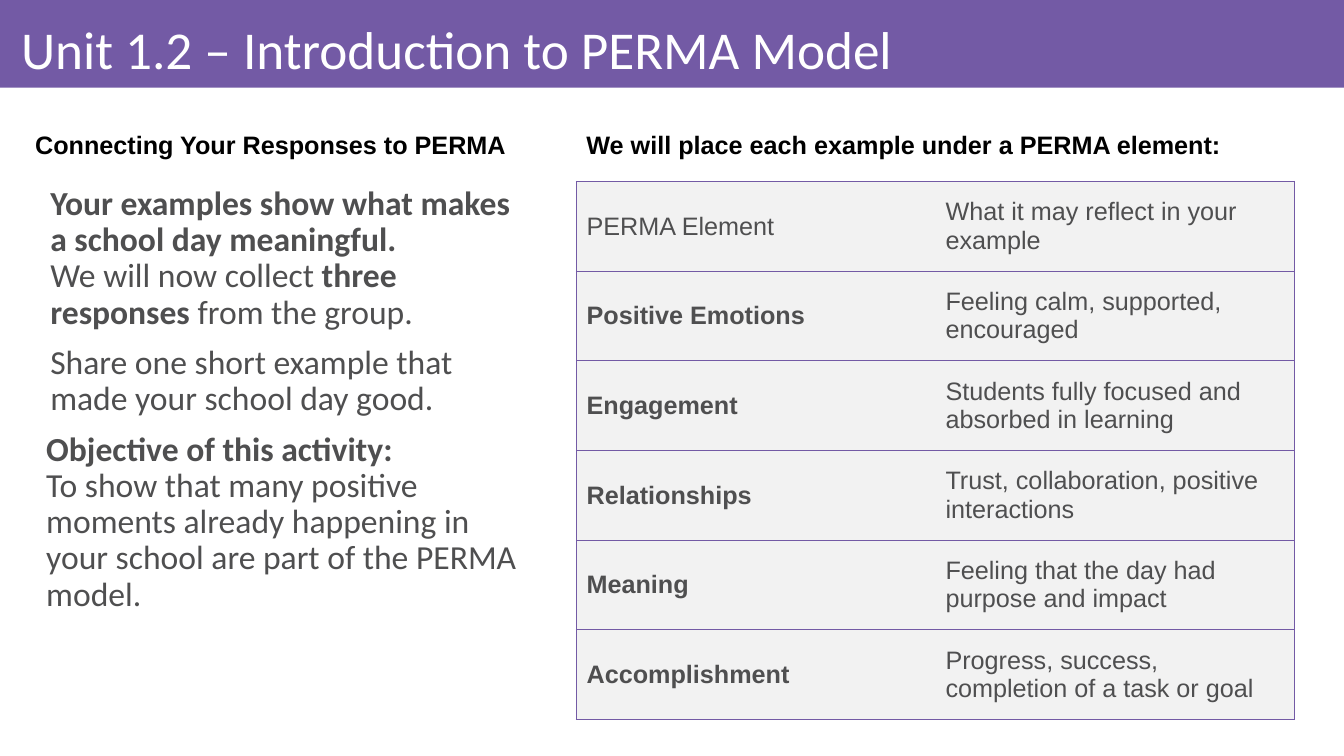
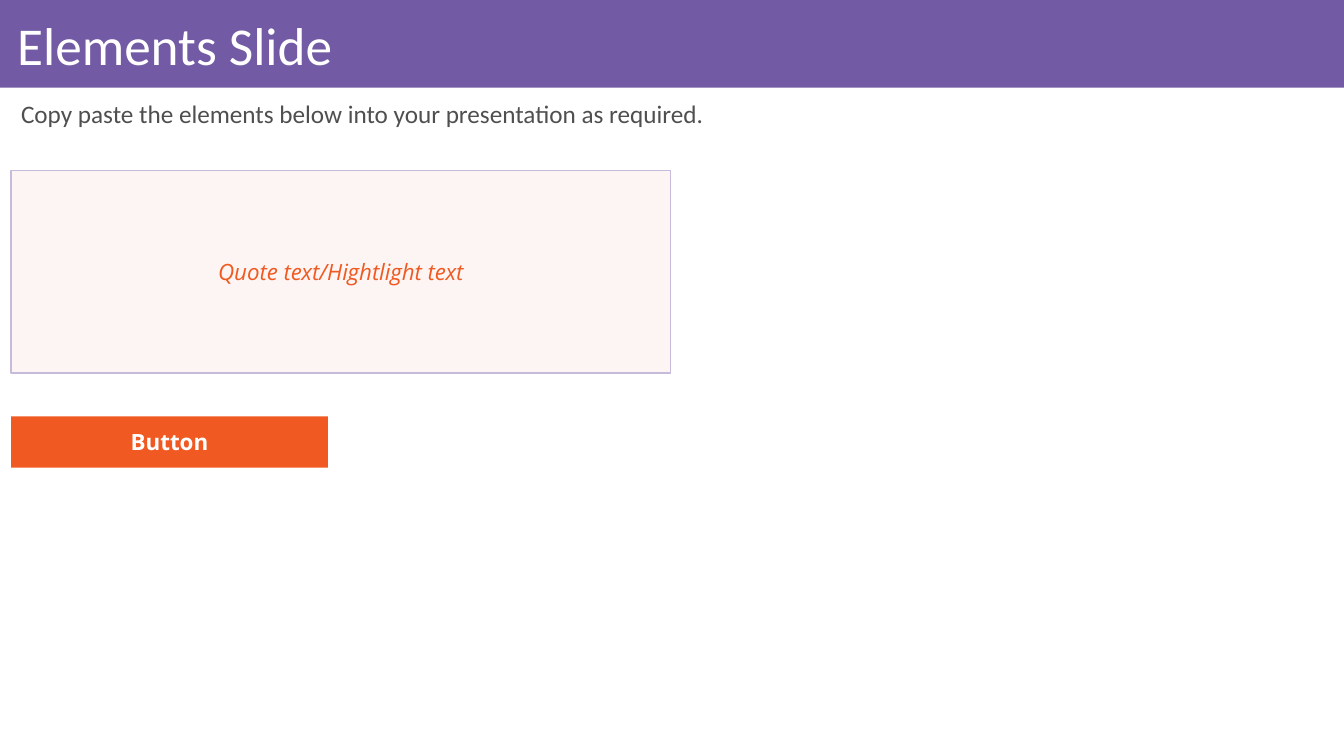
from dataclasses import dataclass

from lxml.etree import SubElement
from pptx import Presentation
from pptx.dml.color import RGBColor
from pptx.enum.shapes import MSO_SHAPE
from pptx.enum.text import MSO_ANCHOR, PP_ALIGN
from pptx.oxml import parse_xml
from pptx.oxml.ns import nsdecls, qn
from pptx.util import Inches, Pt

SLIDE_WIDTH = Inches(13.333)
SLIDE_HEIGHT = Inches(7.5)
PURPLE = "735AA5"
LILAC = "C6BBDB"
ORANGE = "F05A22"
BLUSH = "F8E7E3"
GREY = "4F4F50"
PALE_GREY = "F2F2F2"
WHITE = "FFFFFF"
BLACK = "000000"
PLAIN_TABLE = "{2D5ABB26-0587-4C30-8999-92F81FD0307C}"
BREAK = "\n"


@dataclass(frozen=True)
class Area:
    left: float
    top: float
    width: float
    height: float

    def lengths(self) -> tuple[int, int, int, int]:
        return (
            share(self.left, SLIDE_WIDTH),
            share(self.top, SLIDE_HEIGHT),
            share(self.width, SLIDE_WIDTH),
            share(self.height, SLIDE_HEIGHT),
        )


@dataclass(frozen=True)
class Style:
    font: str
    size: float
    color: str
    bold: bool = False
    italic: bool = False


@dataclass(frozen=True)
class Piece:
    text: str
    bold: bool = False


@dataclass(frozen=True)
class Passage:
    pieces: tuple[Piece, ...]
    indent: float = 0


@dataclass(frozen=True)
class Panel:
    area: Area
    text: str
    style: Style
    fill: str
    opacity: int = 100
    line: str | None = None


TITLE = Style("Calibri", 38, WHITE)
BODY = Style("Calibri", 24, GREY)
INTRO = Style("Calibri", 18, GREY)
HEADING = Style("Arial", 18, BLACK, bold=True)
CELL = Style("Arial", 18, GREY)
QUOTE = Style("Open Sans", 16, ORANGE, italic=True)
BUTTON = Style("Open Sans", 16, WHITE, bold=True)

BAND_AREA = Area(0, 0, 100, 11.6)
TITLE_AREA = Area(0.83, 1.2, 97.97, 10.4)
INTRO_AREA = Area(0.83, 12.8, 97.97, 6.27)
BODY_AREA = Area(0.83, 24, 39.23, 73)
TABLE_AREA = Area(42.9, 24, 53.41, 71.2)

HEADINGS = (
    (Area(1.88, 16.4, 39.23, 5.33), "Connecting Your Responses to PERMA"),
    (Area(42.9, 16.4, 50.4, 5.33), "We will place each example under a PERMA element:"),
)

PASSAGES = (
    Passage((
        Piece("Your examples show what makes a school day meaningful.", True),
        Piece(BREAK),
        Piece("We will now collect "),
        Piece("three responses", True),
        Piece(" from the group."),
    ), 0.29),
    Passage((Piece("Share one short example that made your school day good."),), 0.29),
    Passage((
        Piece("Objective of this activity:", True),
        Piece(BREAK),
        Piece(
            "To show that many positive moments already happening in your "
            "school are part of the PERMA model."
        ),
    ), 0.25),
)

ELEMENTS = (
    ("PERMA Element", "What it may reflect in your example"),
    ("Positive Emotions", "Feeling calm, supported, encouraged"),
    ("Engagement", "Students fully focused and absorbed in learning"),
    ("Relationships", "Trust, collaboration, positive interactions"),
    ("Meaning", "Feeling that the day had purpose and impact"),
    ("Accomplishment", "Progress, success, completion of a task or goal"),
)

PANELS = (
    Panel(Area(0.83, 22.53, 49.06, 26.8), "Quote text/Hightlight text",
          QUOTE, BLUSH, 40, LILAC),
    Panel(Area(0.83, 55.07, 23.56, 6.8), "Button", BUTTON, ORANGE),
)


def share(percent: float, whole: int) -> int:
    return round(whole * percent / 100)


def color(value: str) -> RGBColor:
    return RGBColor.from_string(value)


def set_all(target, formats: dict) -> None:
    for name, value in formats.items():
        setattr(target, name, value)


def paint(fill, value: str) -> None:
    fill.solid()
    fill.fore_color.rgb = color(value)


def write(para, text: str, style: Style, bold: bool | None = None) -> None:
    span = para.add_run()
    span.text = text
    set_all(span.font, {
        "name": style.font,
        "size": Pt(style.size),
        "bold": style.bold if bold is None else bold,
        "italic": style.italic,
    })
    span.font.color.rgb = color(style.color)


def add_text(page, area: Area, **formats):
    frame = page.shapes.add_textbox(*area.lengths()).text_frame
    set_all(frame, {"word_wrap": True, **formats})
    return frame


def add_line(page, area: Area, text: str, style: Style, spacing: float = 1, **formats) -> None:
    para = add_text(page, area, **formats).paragraphs[0]
    para.line_spacing = spacing
    write(para, text, style)


def add_box(page, area: Area, fill: str, opacity: int = 100, line: str | None = None):
    box = page.shapes.add_shape(MSO_SHAPE.RECTANGLE, *area.lengths())
    box.shadow.inherit = False
    paint(box.fill, fill)
    if opacity < 100:
        tint = box.fill._xPr.find(".//" + qn("a:srgbClr"))
        SubElement(tint, qn("a:alpha"), val=str(opacity * 1000))
    if line:
        paint(box.line.fill, line)
        box.line.width = Pt(1)
    else:
        box.line.fill.background()
    return box


def add_panel(page, panel: Panel) -> None:
    box = add_box(page, panel.area, panel.fill, panel.opacity, panel.line)
    set_all(box.text_frame, {"word_wrap": True, "vertical_anchor": MSO_ANCHOR.MIDDLE})
    para = box.text_frame.paragraphs[0]
    para.alignment = PP_ALIGN.CENTER
    write(para, panel.text, panel.style)


def add_page(deck, title: str, inset: float, spacing: float):
    page = deck.slides.add_slide(deck.slide_layouts[6])
    add_box(page, BAND_AREA, PURPLE)
    edge = Inches(0.06)
    add_line(page, TITLE_AREA, title, TITLE, spacing,
             vertical_anchor=MSO_ANCHOR.MIDDLE, margin_left=Inches(inset),
             margin_right=edge, margin_top=edge, margin_bottom=edge)
    return page


def add_passages(page, passages: tuple[Passage, ...]) -> None:
    frame = add_text(page, BODY_AREA)
    for index, passage in enumerate(passages):
        para = frame.add_paragraph() if index else frame.paragraphs[0]
        set_all(para, {"line_spacing": 0.9, "space_before": Pt(10)})
        para._p.get_or_add_pPr().set("marL", str(Inches(passage.indent)))
        for piece in passage.pieces:
            if piece.text == BREAK:
                para.add_line_break()
            else:
                write(para, piece.text, BODY, piece.bold)


def add_borders(cell, sides: str) -> None:
    properties = cell._tc.get_or_add_tcPr()
    for position, side in enumerate(sides):
        properties.insert(position, parse_xml(
            f'<a:ln{side} {nsdecls("a")} w="{Pt(1)}"><a:solidFill>'
            f'<a:srgbClr val="{PURPLE}"/></a:solidFill></a:ln{side}>'
        ))


def add_element_table(page) -> None:
    rows, columns = len(ELEMENTS), len(ELEMENTS[0])
    table = page.shapes.add_table(rows, columns, *TABLE_AREA.lengths()).table
    set_all(table, {"first_row": False, "horz_banding": False})
    table._tbl.tblPr.find(qn("a:tableStyleId")).text = PLAIN_TABLE
    for row, texts in enumerate(ELEMENTS):
        for column, text in enumerate(texts):
            cell = table.cell(row, column)
            cell.vertical_anchor = MSO_ANCHOR.MIDDLE
            paint(cell.fill, PALE_GREY)
            add_borders(cell, ("LTB", "RTB")[column])
            write(cell.text_frame.paragraphs[0], text, CELL, row > 0 and column == 0)


def add_model_page(deck) -> None:
    page = add_page(deck, "Unit 1.2 – Introduction to PERMA Model", 0.1, 1)
    add_passages(page, PASSAGES)
    add_element_table(page)
    for area, text in HEADINGS:
        add_line(page, area, text, HEADING)


def add_elements_page(deck) -> None:
    page = add_page(deck, "Elements Slide", 0.06, 0.9)
    add_line(page, INTRO_AREA,
             "Copy paste the elements below into your presentation as required.", INTRO, 0.9)
    for panel in PANELS:
        add_panel(page, panel)


def main() -> None:
    deck = Presentation()
    set_all(deck, {"slide_width": SLIDE_WIDTH, "slide_height": SLIDE_HEIGHT})
    add_model_page(deck)
    add_elements_page(deck)
    deck.save("out.pptx")


if __name__ == "__main__":
    main()
